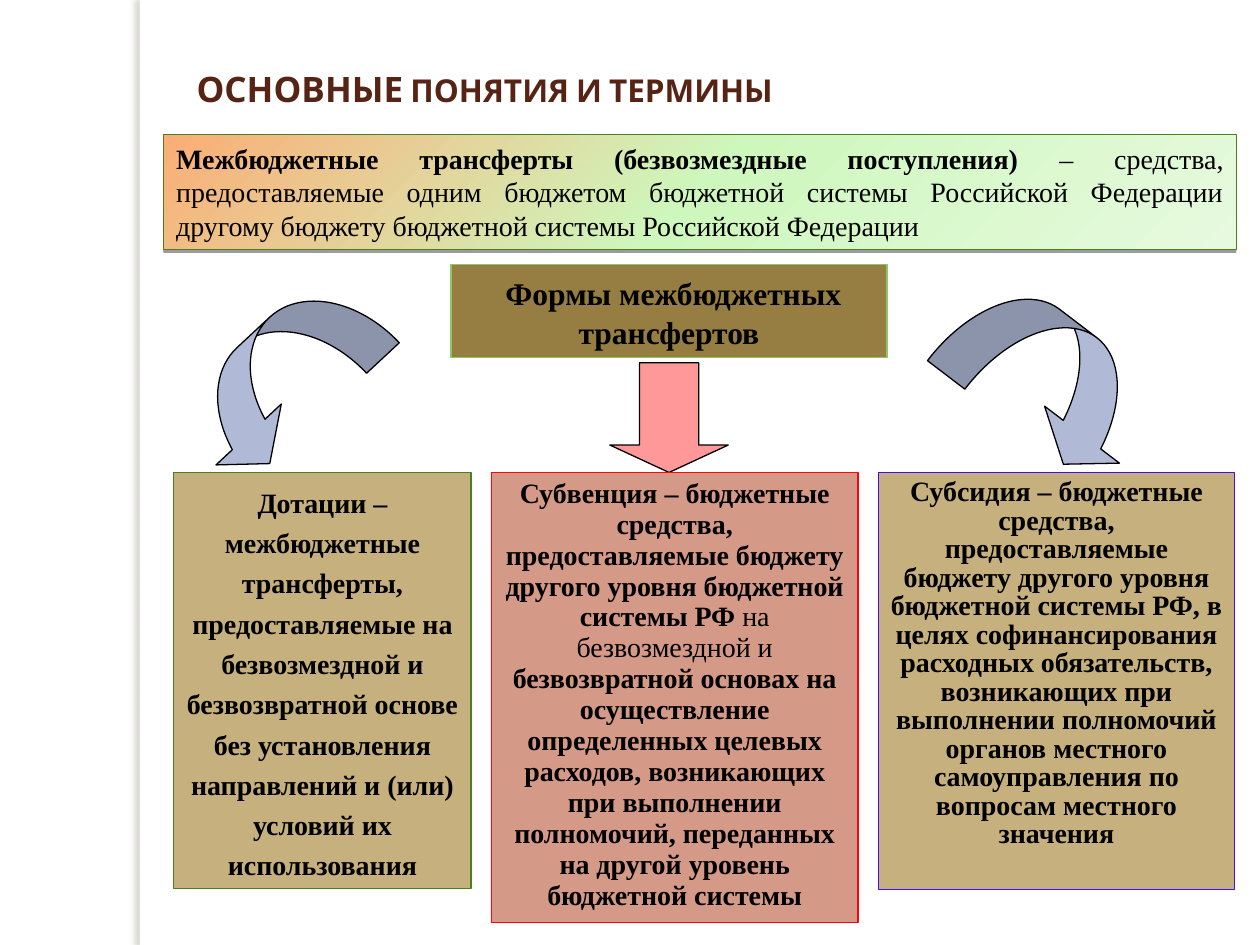
from copy import deepcopy

from lxml import etree
from pptx import Presentation
from pptx.dml.color import RGBColor
from pptx.enum.shapes import MSO_SHAPE
from pptx.enum.text import MSO_ANCHOR, PP_ALIGN
from pptx.oxml.ns import qn
from pptx.util import Inches, Pt

RECT = MSO_SHAPE.RECTANGLE
DOWN = MSO_SHAPE.DOWN_ARROW
CURVE_R = MSO_SHAPE.CURVED_RIGHT_ARROW
CURVE_L = MSO_SHAPE.CURVED_LEFT_ARROW
LEFT, CENTER, JUSTIFY = PP_ALIGN.LEFT, PP_ALIGN.CENTER, PP_ALIGN.JUSTIFY
TOP, MIDDLE, BOTTOM = MSO_ANCHOR.TOP, MSO_ANCHOR.MIDDLE, MSO_ANCHOR.BOTTOM

WHITE = RGBColor(0xFF, 0xFF, 0xFF)
BLACK = RGBColor(0, 0, 0)
GREY = RGBColor(0x73, 0x6F, 0x63)
BROWN = RGBColor(0x57, 0x23, 0x14)
OCHRE = RGBColor(0x96, 0x7D, 0x42)
SAND = RGBColor(0xC6, 0xB0, 0x7E)
ROSE = RGBColor(0xD5, 0x99, 0x88)
PINK = RGBColor(0xFF, 0x99, 0x99)
STEEL = RGBColor(0xB0, 0xBA, 0xD7)
GREEN = RGBColor(0x4A, 0x80, 0x1E)
LIME = RGBColor(0x8D, 0xC7, 0x65)
RED = RGBColor(0xFB, 0x05, 0x0B)
BLUE = RGBColor(0x47, 0x09, 0xF7)
BLEND = [(0, RGBColor(0xFA, 0xAE, 0x76)), (0.5, RGBColor(0xCE, 0xF7, 0xBD)),
         (1, RGBColor(0xE7, 0xFA, 0xDF))]

SERIF, SANS = "Times New Roman", "Cabin"
COLS, ROWS = 100, 75  # grid of the slide


def write(frame, runs, size=16, font=SERIF, color=BLACK, align=CENTER,
          anchor=TOP, space=None):
    """Fill a frame with one paragraph; a run is (text, bold[, size])."""
    frame.word_wrap = True
    frame.vertical_anchor = anchor
    par = frame.paragraphs[0]
    par.alignment = align
    if space:
        par.line_spacing = space
    for text, bold, *own in runs:
        run = par.add_run()
        run.text = text
        run.font.name = font
        run.font.size = Pt(own[0] if own else size)
        run.font.bold = bold
        run.font.color.rgb = color


class Deck:
    def __init__(self):
        self.prs = Presentation()
        self.prs.slide_width, self.prs.slide_height = Inches(10), Inches(7.5)
        self.slide = self.prs.slides.add_slide(self.prs.slide_layouts[5])

    def box(self, x, y, w, h):
        col = self.prs.slide_width / COLS
        row = self.prs.slide_height / ROWS
        return [round(n) for n in (x * col, y * row, w * col, h * row)]

    def title(self, area, runs, **style):
        head = self.slide.shapes.title
        head.left, head.top, head.width, head.height = self.box(*area)
        write(head.text_frame, runs, **style)

    def shape(self, kind, area, fill, line=None, width=0.75):
        item = self.slide.shapes.add_shape(kind, *self.box(*area))
        item.shadow.inherit = False
        if isinstance(fill, list):
            self.blend(item, fill)
        else:
            item.fill.solid()
            item.fill.fore_color.rgb = fill
        if line is None:
            item.line.fill.background()
        else:
            item.line.color.rgb = line
            item.line.width = Pt(width)
        return item

    def blend(self, item, stops):
        item.fill.gradient()
        item.fill.gradient_angle = 315
        group = item._element.spPr.find(".//" + qn("a:gsLst"))
        group.append(deepcopy(group[0]))
        for stop, (place, color) in zip(item.fill.gradient_stops, stops):
            stop.position = place
            stop.color.rgb = color

    def shade(self, item, color, alpha, blur, dist, angle):
        effects = item._element.spPr.find(qn("a:effectLst"))
        outer = etree.SubElement(
            effects, qn("a:outerShdw"), blurRad=str(Pt(blur)),
            dist=str(Pt(dist)), dir=str(angle * 60000), algn="ctr",
            rotWithShape="0")
        tint = etree.SubElement(outer, qn("a:srgbClr"), val=str(color))
        etree.SubElement(tint, qn("a:alpha"), val=str(alpha * 1000))

    def card(self, area, fill, line, runs, width=0.75, **style):
        item = self.shape(RECT, area, fill, line, width)
        write(item.text_frame, runs, **style)
        return item

    def arrow(self, kind, area, fill, bends, turn=0):
        item = self.shape(kind, area, fill, BLACK)
        item.rotation = turn
        for i, bend in enumerate(bends):
            item.adjustments[i] = bend


def main():
    deck = Deck()

    # Side strip and title
    strip = deck.shape(RECT, (11.1, 0, 0.8, ROWS), WHITE)
    deck.shade(strip, GREY, 25, 3, 3, 180)
    deck.title((14.6, 2.9, 82, 6.3),
               [("ОСНОВНЫЕ", True), (" ПОНЯТИЯ И ТЕРМИНЫ", True, 18)],
               size=20, font=SANS, color=BROWN, align=LEFT, anchor=BOTTOM)

    # Definition
    banner = deck.card((13, 10.7, 85.1, 9.1), BLEND, GREEN, [
        ("Межбюджетные трансферты (безвозмездные поступления) ", True),
        ("– средства, предоставляемые одним бюджетом бюджетной системы "
         "Российской Федерации другому бюджету бюджетной системы "
         "Российской Федерации", False)], width=0.5, align=JUSTIFY)
    deck.shade(banner, BLACK, 38, 0, 1.6, 90)

    # Heading of the forms
    deck.card((35.8, 21, 34.6, 7.4), OCHRE, LIME,
              [(" ", True, 20), ("Формы межбюджетных трансфертов", True)],
              size=18)

    # Arrows to the three forms
    deck.arrow(CURVE_R, (18.1, 21.3, 8.5, 17.6), STEEL,
               (0.417, 0.834, 0.333), 47)
    deck.arrow(CURVE_L, (78.6, 21.4, 9.6, 17.3), STEEL,
               (0.389, 0.778, 0.288), 307.3)
    deck.arrow(DOWN, (48.4, 28.8, 9.4, 8.7), PINK, (0.5, 0.25))

    # The three forms: left, width, height, fill, line, line spacing, runs
    forms = [
        (13.8, 23.6, 33, SAND, GREEN, 1.2, [
            ("Дотации – межбюджетные трансферты, предоставляемые на "
             "безвозмездной и безвозвратной основе без установления "
             "направлений и (или) условий их использования", True)]),
        (39, 29.1, 35.7, ROSE, RED, 0.92, [
            ("Субвенция – бюджетные средства, предоставляемые бюджету "
             "другого уровня бюджетной системы РФ ", True),
            ("на безвозмездной и ", False),
            ("безвозвратной основах на осуществление определенных целевых "
             "расходов, возникающих при выполнении полномочий, переданных "
             "на другой уровень бюджетной системы", True)]),
        (69.7, 28.3, 33.1, SAND, BLUE, 0.85, [
            ("Субсидия – бюджетные средства, предоставляемые бюджету "
             "другого уровня бюджетной системы РФ, в целях "
             "софинансирования расходных обязательств, возникающих при "
             "выполнении полномочий органов местного самоуправления по "
             "вопросам местного значения", True)]),
    ]
    for x, w, h, fill, line, space, runs in forms:
        deck.card((x, 37.5, w, h), fill, line, runs, space=space)

    deck.prs.save("out.pptx")


if __name__ == "__main__":
    main()
